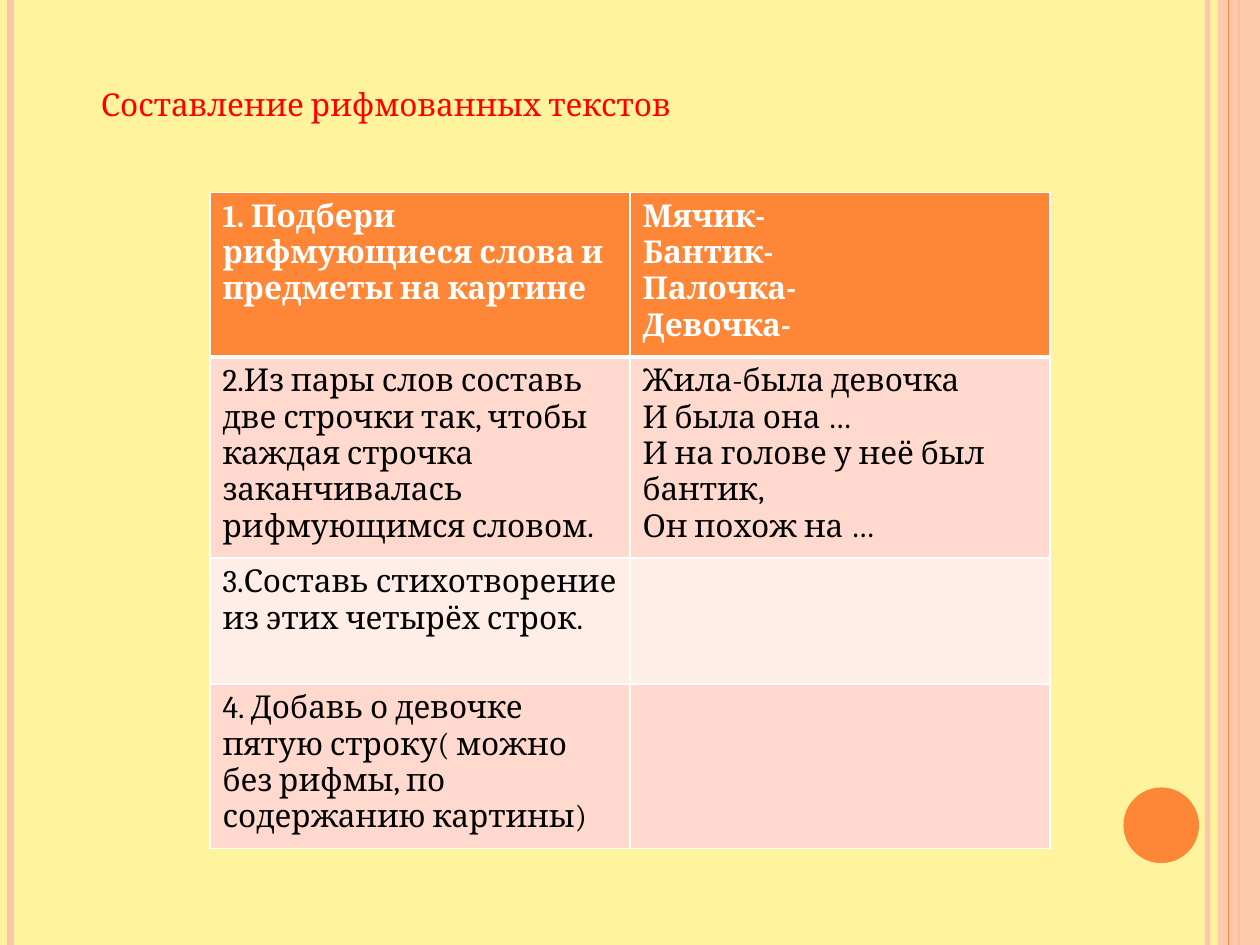
from lxml import etree
from pptx import Presentation
from pptx import util as u
from pptx.dml.color import RGBColor
from pptx.enum import shapes, text
from pptx.oxml.ns import qn

Pt = u.Pt
COLORS = {
    "paper": "FFF39D", "peach": "FEC3AE", "orange": "FE8637", "title": "FF0000",
    "white": "FFFFFF", "black": "000000", "band": "FFD9CE", "pale": "FFEDE8",
}
ROWS = [
    (94, [["1. Подбери рифмующиеся слова и предметы на картине"],
          ["Мячик-", "Бантик-", "Палочка-", "Девочка-"]]),
    (115, [["2.Из пары слов составь две строчки так, чтобы каждая строчка "
            "заканчивалась рифмующимся словом."],
           ["Жила-была девочка", "И была она …",
            "И на голове у неё был бантик,", "Он похож на …"]]),
    (72, [["3.Составь стихотворение из этих четырёх строк."], []]),
    (94, [["4. Добавь о девочке пятую строку( можно без рифмы, "
           "по содержанию картины)"], []]),
]


def rgb(name):
    return RGBColor.from_string(COLORS[name])


def set_alpha(owner, percent):
    """Make the solid colour inside the owner's properties translucent."""
    color = next(owner.iter(qn("a:srgbClr")))
    etree.SubElement(color, qn("a:alpha")).set("val", str(percent * 1000))


class SlideBuilder:
    font = {"name": "Cambria", "size": Pt(18)}

    def __init__(self, page):
        self.page = page

    def background(self, color):
        fill = self.page.background.fill
        fill.solid()
        fill.fore_color.rgb = rgb(color)

    def add_lines(self, frame, lines, color, bold=False):
        for index, line in enumerate(lines):
            para = frame.paragraphs[0] if index == 0 else frame.add_paragraph()
            para.alignment = text.PP_ALIGN.LEFT
            span = para.add_run()
            span.text = line
            for key, value in {**self.font, "bold": bold}.items():
                setattr(span.font, key, value)
            span.font.color.rgb = rgb(color)

    def title(self, line, left, top, width, height):
        box = self.page.shapes.title
        place = {"left": left, "top": top, "width": width, "height": height}
        for key, value in place.items():
            setattr(box, key, Pt(value))
        layout = {"word_wrap": True, "auto_size": text.MSO_AUTO_SIZE.NONE,
                  "vertical_anchor": text.MSO_ANCHOR.TOP}
        for key, value in layout.items():
            setattr(box.text_frame, key, value)
        self.add_lines(box.text_frame, [line], "title")

    def vertical_line(self, x, color, width, alpha=100):
        line = self.page.shapes.add_connector(
            shapes.MSO_CONNECTOR.STRAIGHT, Pt(x), 0, Pt(x), Pt(540))
        line.line.color.rgb = rgb(color)
        line.line.width = Pt(width)
        properties = line._element.spPr
        if alpha < 100:
            set_alpha(properties, alpha)
        etree.SubElement(properties, qn("a:effectLst"))

    def shape(self, kind, color, left, top, width, height, alpha=100):
        box = self.page.shapes.add_shape(
            kind, Pt(left), Pt(top), Pt(width), Pt(height))
        box.shadow.inherit = False
        box.fill.solid()
        box.fill.fore_color.rgb = rgb(color)
        box.line.fill.background()
        if alpha < 100:
            set_alpha(box._element.spPr, alpha)

    def cell_borders(self, cell, widths):
        properties = cell._tc.get_or_add_tcPr()
        for index, (side, width) in enumerate(widths.items()):
            line = etree.Element(qn(f"a:ln{side}"), w=str(Pt(width)))
            fill = etree.SubElement(line, qn("a:solidFill"))
            etree.SubElement(fill, qn("a:srgbClr"), val=COLORS["white"])
            properties.insert(index, line)

    def table(self, rows, left, top, width):
        height = sum(row_height for row_height, _ in rows)
        grid = self.page.shapes.add_table(
            len(rows), 2, Pt(left), Pt(top), Pt(width), Pt(height)).table
        for r, (row_height, cells) in enumerate(rows):
            grid.rows[r].height = Pt(row_height)
            header = r == 0
            fill = "orange" if header else ("pale", "band")[r % 2]
            for c, lines in enumerate(cells):
                cell = grid.cell(r, c)
                cell.fill.solid()
                cell.fill.fore_color.rgb = rgb(fill)
                self.add_lines(cell.text_frame, lines,
                               "white" if header else "black", header)
                self.cell_borders(cell, {"L": 1, "R": 1, "T": 3 if r == 1 else 1,
                                         "B": 3 if header else 1})


def main():
    deck = Presentation()
    deck.slide_width, deck.slide_height = Pt(720), Pt(540)
    slide = SlideBuilder(deck.slides.add_slide(deck.slide_layouts[5]))
    slide.background("paper")
    slide.vertical_line(690, "peach", 3, alpha=93)
    slide.vertical_line(6, "peach", 4.5)
    slide.vertical_line(708, "orange", 1.5)
    slide.shape(shapes.MSO_SHAPE.RECTANGLE, "peach", 696, 0, 24, 540, alpha=87)
    slide.vertical_line(702, "orange", 0.75)
    slide.shape(shapes.MSO_SHAPE.OVAL, "orange", 642, 450, 43.2, 43.2)
    slide.title("Составление рифмованных текстов", 50.4, 45, 556.6, 29)
    slide.table(ROWS, 120, 110, 480)
    deck.save("out.pptx")


if __name__ == "__main__":
    main()
